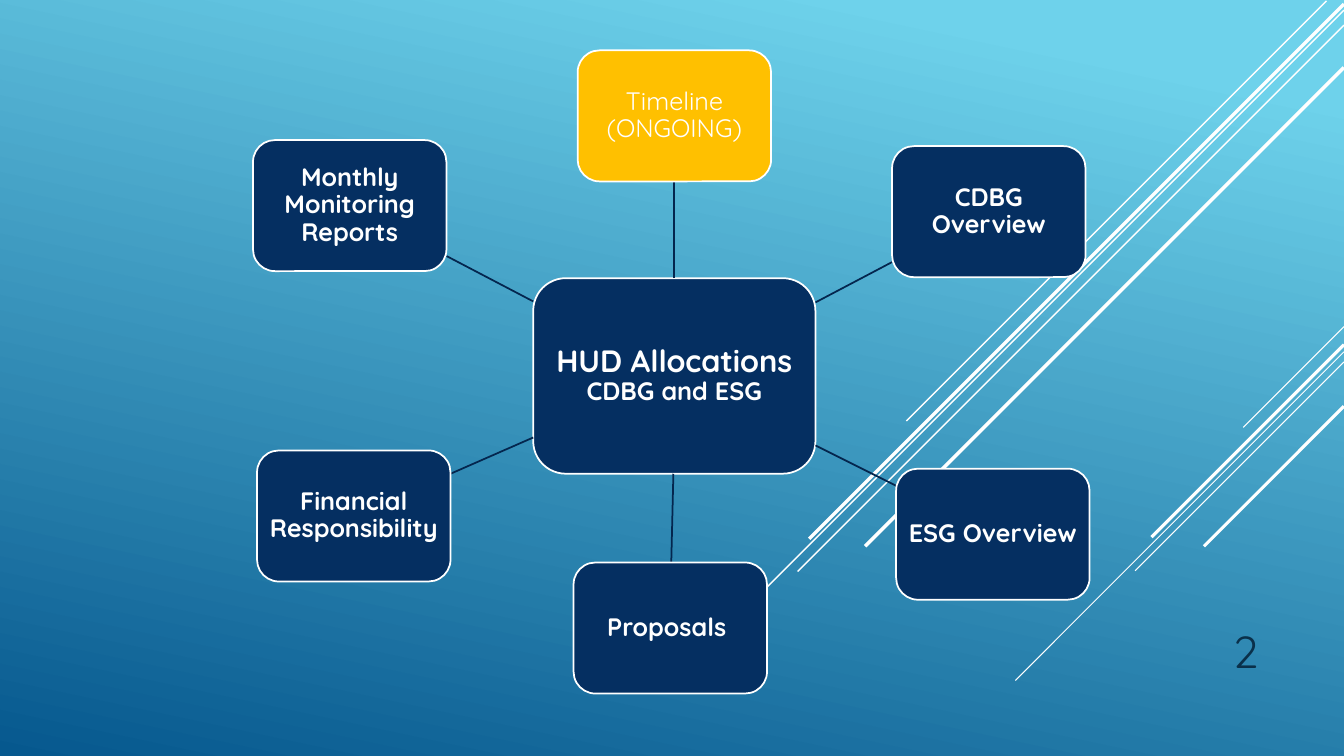
from dataclasses import dataclass

from lxml.etree import SubElement
from pptx import Presentation
from pptx.dml.color import RGBColor as Color
from pptx.enum.shapes import MSO_CONNECTOR as Connector, MSO_SHAPE as Preset
from pptx.enum.text import MSO_ANCHOR as Anchor, PP_ALIGN as Align
from pptx.oxml.ns import qn
from pptx.util import Pt


@dataclass(frozen=True)
class Theme:
    font: str = "Quicksand"
    sky: str = "6ED2EB"
    sea: str = "06588E"
    white: str = "FFFFFF"
    navy: str = "052F61"
    gold: str = "FFC000"
    spoke: str = "04264E"
    number: str = "0A304A"
    hub_size: float = 22
    node_size: float = 18
    number_size: float = 32
    outline: float = 1.25


class Board:
    def __init__(self, slide, theme):
        self.slide = slide
        self.theme = theme

    def background(self, angle):
        fill = self.slide.background.fill
        fill.gradient()
        fill.gradient_angle = angle
        stops = ((0.1, self.theme.sky), (1, self.theme.sea))
        for stop, (position, color) in zip(fill.gradient_stops, stops):
            stop.position = position
            stop.color.rgb = Color.from_string(color)

    def line(self, start, end, color, width):
        connector = self.slide.shapes.add_connector(
            Connector.STRAIGHT, *map(Pt, (*start, *end)))
        connector.line.color.rgb = Color.from_string(color)
        connector.line.width = Pt(width)
        SubElement(connector._element.spPr, qn("a:effectLst"))

    def wording(self, shape, runs, color, align, anchor, inset):
        frame = shape.text_frame
        margins = ("margin_left", "margin_right", "margin_top", "margin_bottom")
        layout = {"word_wrap": True, "vertical_anchor": anchor,
                  **dict.fromkeys(margins, Pt(inset))}
        for key, value in layout.items():
            setattr(frame, key, value)
        paragraph = frame.paragraphs[0]
        paragraph.alignment = align
        paragraph.line_spacing = 0.9
        for text, size, bold in runs:
            run = paragraph.add_run()
            run.text = text
            style = {"name": self.theme.font, "size": Pt(size), "bold": bold}
            for key, value in style.items():
                setattr(run.font, key, value)
            run.font.color.rgb = Color.from_string(color)

    def card(self, corner, size, fill, runs, inset):
        card = self.slide.shapes.add_shape(
            Preset.ROUNDED_RECTANGLE, *map(Pt, (*corner, *size)))
        card.shadow.inherit = False
        card.fill.solid()
        card.fill.fore_color.rgb = Color.from_string(fill)
        card.line.color.rgb = Color.from_string(self.theme.white)
        card.line.width = Pt(self.theme.outline)
        self.wording(card, runs, self.theme.white, Align.CENTER, Anchor.MIDDLE, inset)

    def label(self, corner, size, runs, color):
        label = self.slide.shapes.add_textbox(*map(Pt, (*corner, *size)))
        self.wording(label, runs, color, Align.RIGHT, Anchor.BOTTOM, 7.2)


RAYS = (
    (960, 233.3, 72, 0.75),
    (960, 251.3, 234.7, 0.75),
    (960, 258.5, 149.2, 0.75),
    (960, 246.2, 137.5, 2.25),
    (960, 290.2, 100, 2.25),
    (947.5, 0.7, 300, 1),
    (960, 7.2, 478.8, 1),
    (960, 18, 390.2, 1),
    (960, 2.9, 382, 2.5),
    (960, 48.2, 342, 2.5),
)

THEME = Theme()
NODES = (
    ("Timeline (ONGOING)", (412.6, 36), (481.7, 198.7), (481.7, 129.6), THEME.gold, False),
    ("ESG Overview", (640.1, 334.8), (582.5, 318.2), (640.1, 347), THEME.navy, True),
    ("Proposals ", (409.7, 401.8), (481, 338.4), (479.5, 401.8), THEME.navy, True),
    ("Monthly Monitoring Reports", (180.7, 100.1), (380.9, 215.3), (319, 182.9), THEME.navy, True),
    ("Financial Responsibility", (183.6, 321.8), (380.9, 312.5), (321.8, 338.4), THEME.navy, True),
    ("CDBG Overview", (637.2, 104.4), (582.5, 216), (637.2, 187.2), THEME.navy, True),
)


def main():
    deck = Presentation()
    deck.slide_width, deck.slide_height = Pt(960), Pt(540)
    board = Board(deck.slides.add_slide(deck.slide_layouts[6]), THEME)
    board.background(258)
    for x, y, run, width in RAYS:
        board.line((x, y), (x - run, y + run), THEME.white, width)
    board.label((815.8, 439.2), (90, 52.6), [("2", THEME.number_size, False)], THEME.number)
    hub_runs = [("HUD Allocations ", THEME.hub_size, True),
                ("CDBG and ESG", THEME.node_size, True)]
    board.card((380.9, 198.7), (201.6, 139.7), THEME.navy, hub_runs, 4.4)
    for text, corner, hub_end, node_end, fill, bold in NODES:
        board.line(hub_end, node_end, THEME.spoke, THEME.outline)
        board.card(corner, (138.2, 93.6), fill, [(text, THEME.node_size, bold)], 3.4)
    deck.save("out.pptx")


if __name__ == "__main__":
    main()
